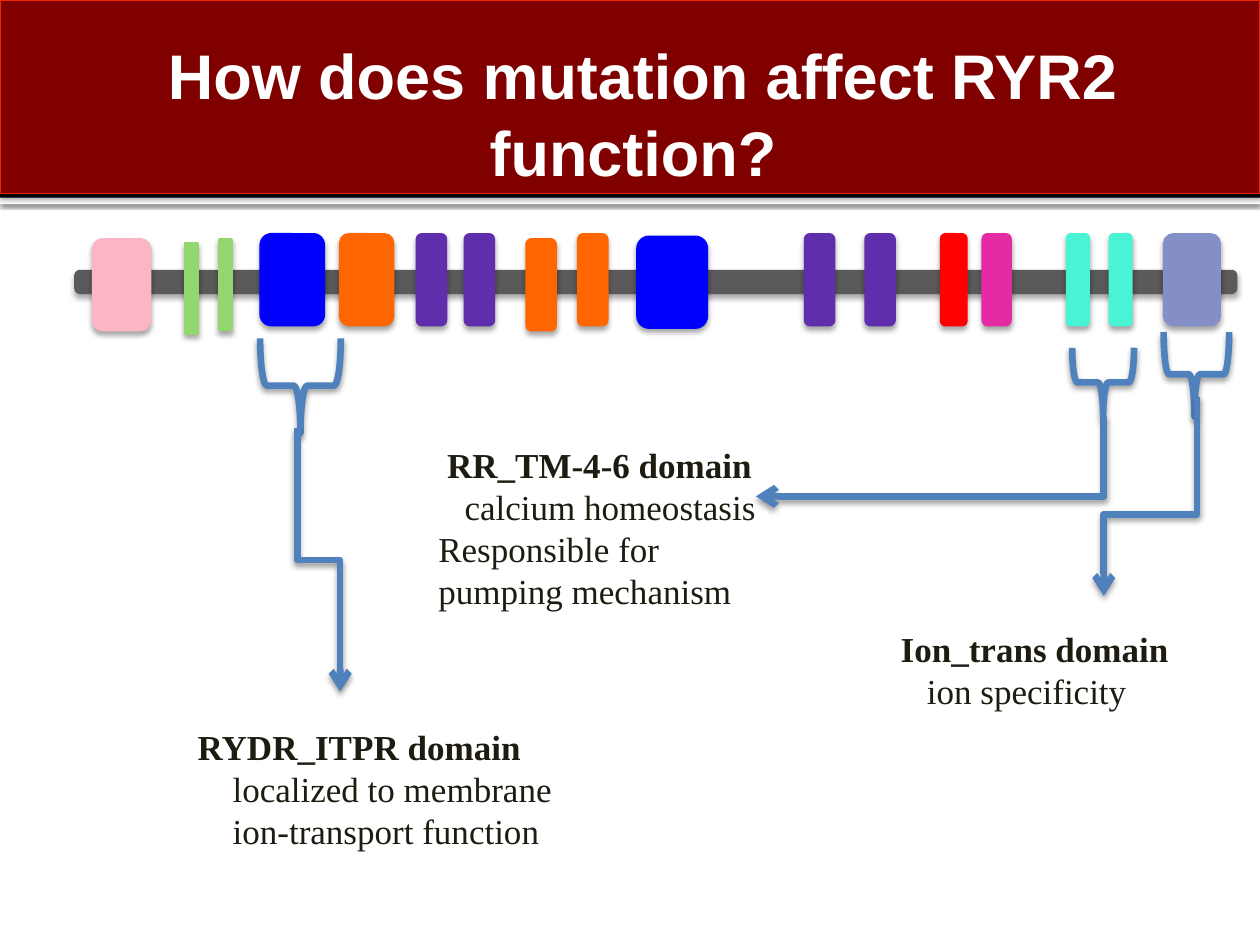
from lxml.etree import SubElement
from pptx import Presentation
from pptx.dml.color import RGBColor
from pptx.enum.shapes import MSO_CONNECTOR, MSO_SHAPE
from pptx.enum.text import MSO_ANCHOR, PP_ALIGN
from pptx.oxml.ns import qn
from pptx.util import Inches, Pt

ACCENT = "4F81BD"


def grid(units):
    """Slide grid: 100 columns by 75 rows, each a tenth of an inch."""
    return Inches(units / 10)


def color(hex_string):
    return RGBColor.from_string(hex_string)


def add_shadow(shape, opacity, blur, distance):
    properties = shape._element.spPr
    for old in properties.findall(qn("a:effectLst")):
        properties.remove(old)
    effects = SubElement(properties, qn("a:effectLst"))
    outer = SubElement(effects, qn("a:outerShdw"), blurRad=str(Pt(blur)),
                       dist=str(Pt(distance)), dir="5400000", rotWithShape="0")
    black = SubElement(outer, qn("a:srgbClr"), val="000000")
    SubElement(black, qn("a:alpha"), val=str(opacity * 1000))


def add_box(shapes, kind, box, fill=None, line=None, weight=1.5, shadow=None):
    shape = shapes.add_shape(kind, *map(grid, box))
    shape.shadow.inherit = False
    if fill:
        shape.fill.solid()
        shape.fill.fore_color.rgb = color(fill)
    else:
        shape.fill.background()
    if line:
        shape.line.color.rgb = color(line)
        shape.line.width = Pt(weight)
    else:
        shape.line.fill.background()
    if shadow:
        add_shadow(shape, *shadow)
    return shape


def write(paragraph, text, font="Times New Roman", size=20, hex_color="1E1C11",
          bold=False, indent=0, align=None):
    run = paragraph.add_run()
    run.text = text
    run.font.name, run.font.size, run.font.bold = font, Pt(size), bold
    run.font.color.rgb = color(hex_color)
    paragraph.alignment = align
    if indent:
        paragraph._p.get_or_add_pPr().set("indent", str(Pt(indent)))


def title_band(slide, box, text):
    left, top, width, height = box
    # Rule below the band, then the band itself
    add_box(slide.shapes, MSO_SHAPE.RECTANGLE, (left, top + height, width, 0.5),
            fill="FFFFFF", shadow=(60, 2.5, 0.8))
    add_box(slide.shapes, MSO_SHAPE.RECTANGLE, box, fill="000000")
    add_box(slide.shapes, MSO_SHAPE.RECTANGLE, (left, top, width, height * 0.98),
            fill="800000", line="EA2603", weight=0.5, shadow=(38, 3.1, 2))
    # Title, brought in front of the band
    title = slide.shapes.title
    title.left, title.top = grid(left), grid(top + height * 0.13)
    title.width, title.height = grid(width), grid(height * 0.87)
    frame = title.text_frame
    frame.vertical_anchor = MSO_ANCHOR.MIDDLE
    frame.margin_right = Inches(0.05)
    paragraph = frame.paragraphs[0]
    paragraph.line_spacing = Pt(44)
    write(paragraph, text, font="Arial", size=36, hex_color="FFFFFF", bold=True,
          indent=11, align=PP_ALIGN.CENTER)
    slide.shapes._spTree.append(title._element)


def gene_map(slide, box, domains):
    left, top, width, height = box
    group = slide.shapes.add_group_shape()
    shadow = (35, 3, 2)
    # Backbone
    add_box(group.shapes, MSO_SHAPE.ROUNDED_RECTANGLE,
            (left, top + height * 0.42, width, height * 0.21),
            fill="5A5A5A", line="5A5A5A", weight=3, shadow=shadow)
    # Domains: column offset, width, drop below the top, colour
    for offset, domain_width, drop, fill in domains:
        domain = add_box(group.shapes, MSO_SHAPE.ROUNDED_RECTANGLE,
                         (left + offset, top + drop, domain_width, height),
                         fill=fill, line=fill, shadow=shadow)
        if domain_width <= 1:
            domain.adjustments[0] = 0


def add_bent_arrow(slide, start, end, bend):
    """Arrow that leaves downwards; without a bend share it has one corner."""
    (x1, y1), (x2, y2) = start, end
    length, breadth = y2 - y1, abs(x2 - x1)
    left = (x1 + x2 - length) / 2
    top = (y1 + y2 - breadth) / 2
    arrow = slide.shapes.add_connector(
        MSO_CONNECTOR.ELBOW, grid(left), grid(top),
        grid(left + length), grid(top + breadth))
    transform = arrow._element.spPr.find(qn("a:xfrm"))
    if x2 > x1:
        transform.set("flipH", "1")
    transform.set("rot", str((270 if x2 > x1 else 90) * 60000))
    geometry = arrow._element.spPr.find(qn("a:prstGeom"))
    if bend is None:
        geometry.set("prst", "bentConnector2")
    else:
        SubElement(geometry.find(qn("a:avLst")), qn("a:gd"), name="adj1",
                   fmla=f"val {round(bend * 100000)}")
    arrow.line.color.rgb = color(ACCENT)
    arrow.line.width = Pt(3.78)
    SubElement(arrow.line._get_or_add_ln(), qn("a:tailEnd"), type="arrow")
    add_shadow(arrow, 38, 3.5, 2)


def callout(slide, brace_box, start, end, text_box, lines, bend=None, point=0.5):
    """Brace, arrow and text; offsets are counted from the brace's corner."""
    left, top, width, height = brace_box
    # Brace turned to point downwards
    brace = add_box(slide.shapes, MSO_SHAPE.LEFT_BRACE,
                    (left + (width - height) / 2, top + (height - width) / 2,
                     height, width),
                    line=ACCENT, weight=3.78, shadow=(38, 3.5, 2))
    brace.rotation = 270
    brace.adjustments[1] = point
    add_bent_arrow(slide, (left + start[0], top + start[1]),
                   (left + end[0], top + end[1]), bend)
    # Text: heading first, then plain lines
    x, y, text_width, text_height = text_box
    frame = slide.shapes.add_textbox(grid(left + x), grid(top + y), grid(text_width),
                                     grid(text_height)).text_frame
    frame.word_wrap = True
    for index, (text, indent) in enumerate(lines):
        paragraph = frame.add_paragraph() if index else frame.paragraphs[0]
        write(paragraph, text, bold=index == 0, indent=indent)


def main():
    presentation = Presentation()
    presentation.slide_width, presentation.slide_height = grid(100), grid(75)
    slide = presentation.slides.add_slide(presentation.slide_layouts[5])

    title_band(slide, (0, 0, 100, 15.7), "How does mutation affect RYR2 function?")
    callout(slide, (20.65, 26.85, 6.4, 7.5), (2.95, 7.15), (6.35, 28.05),
            (-5.95, 30.25, 34, 11.1),
            [("RYDR_ITPR domain", 0), ("localized to membrane", 20),
             ("ion-transport function", 20)], bend=0.5)
    callout(slide, (92.35, 26.35, 5.2, 6.7), (2.65, 5.15), (-4.75, 20.95),
            (-21.85, 22.95, 28.3, 7.7),
            [("Ion_trans domain", 0), ("ion specificity", 15)],
            bend=0.59, point=0.47)
    callout(slide, (85.1, 27.6, 4.9, 5.5), (2.5, 5.5), (-25.1, 11.8),
            (-51.3, 7.1, 29.8, 14.5),
            [("RR_TM-4-6 domain", 5), ("calcium homeostasis", 15),
             ("Responsible for pumping mechanism", 0)])

    blue, orange, purple = "0000FF", "FF6600", "5F2EAD"
    green, turquoise = "94D771", "48F4D4"
    gene_map(slide, (6.1, 18.6, 91.9, 7.2), [
        (1.3, 4.5, 0.4, "FBB5C4"),
        (8.6, 1, 0.7, green), (11.3, 1, 0.4, green),
        (14.6, 5, 0, blue), (20.9, 4.2, 0, orange),
        (27, 2.3, 0, purple), (30.8, 2.3, 0, purple),
        (35.7, 2.3, 0.4, orange), (39.8, 2.3, 0, orange),
        (44.5, 5.5, 0.2, blue),
        (57.8, 2.3, 0, purple), (62.6, 2.3, 0, purple),
        (68.6, 2, 0, "FF0000"), (71.9, 2.2, 0, "E42BA3"),
        (78.6, 1.7, 0, turquoise), (82, 1.7, 0, turquoise),
        (86.3, 4.4, 0, "858FC7"),
    ])
    presentation.save("out.pptx")


if __name__ == "__main__":
    main()
